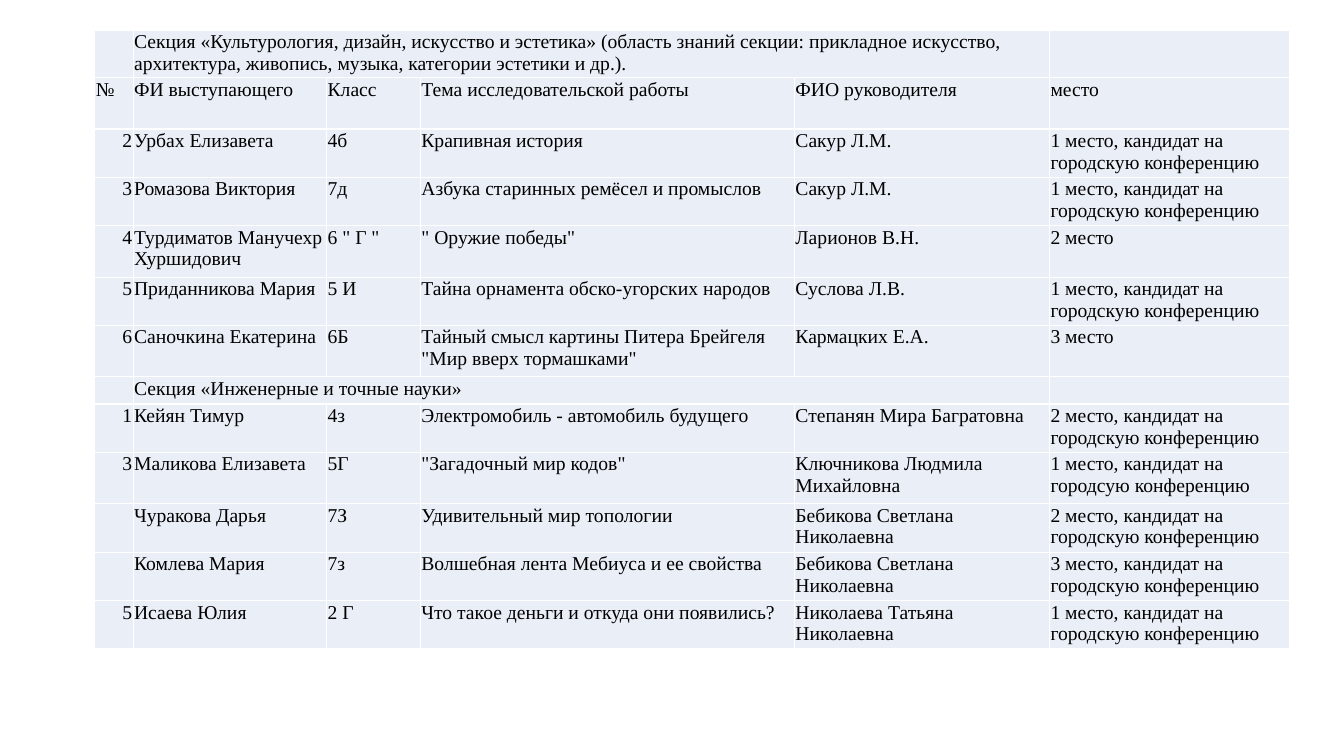
from lxml import etree
from pptx import Presentation
from pptx import util as u
from pptx.dml.color import RGBColor
from pptx.enum import text
from pptx.oxml import ns

BLACK = RGBColor(0x00, 0x00, 0x00)
PALE_BLUE = RGBColor(0xEA, 0xEF, 0xF7)
WHITE = RGBColor(0xFF, 0xFF, 0xFF)

FONT_SIZE = u.Pt(14)
FONT_FORMAT = {"name": "Times New Roman", "size": FONT_SIZE, "bold": False}
CELL_FORMAT = {
    "margin_left": u.Inches(0.01),
    "margin_right": u.Inches(0.01),
    "margin_top": u.Inches(0.01),
    "margin_bottom": u.Inches(0),
    "vertical_anchor": text.MSO_ANCHOR.TOP,
}
TABLE_FORMAT = {"first_row": False, "horz_banding": False}

COLUMN_WIDTHS = [0.38, 1.92, 0.93, 3.71, 2.53, 2.38]
ROW_HEIGHTS = [0.47, 0.51, 0.48, 0.48, 0.51, 0.48, 0.51,
               0.27, 0.48, 0.51, 0.48, 0.48, 0.48]
CANDIDATE = "место, кандидат на городскую конференцию"

# A row with a single entry is a section heading
ROWS = [
    ["Секция «Культурология, дизайн, искусство и эстетика» (область знаний секции: "
     "прикладное искусство, архитектура, живопись, музыка, категории эстетики и др.)."],
    ["№", "ФИ выступающего", "Класс", "Тема исследовательской работы",
     "ФИО руководителя", "место"],
    ["2", "Урбах Елизавета", "4б", "Крапивная история", "Сакур Л.М.", f"1 {CANDIDATE}"],
    ["3", "Ромазова Виктория", "7д", "Азбука старинных ремёсел и промыслов",
     "Сакур Л.М.", f"1 {CANDIDATE}"],
    ["4", "Турдиматов Манучехр Хуршидович", '6 " Г "', '" Оружие победы"',
     "Ларионов В.Н.", "2 место"],
    ["5", "Приданникова Мария", "5 И", "Тайна орнамента обско-угорских народов",
     "Суслова Л.В.", f"1 {CANDIDATE}"],
    ["6", "Саночкина Екатерина", "6Б",
     'Тайный смысл картины Питера Брейгеля "Мир вверх тормашками"',
     "Кармацких Е.А.", "3 место"],
    ["Секция «Инженерные и точные науки»"],
    ["1", "Кейян Тимур", "4з", "Электромобиль - автомобиль будущего",
     "Степанян Мира Багратовна", f"2 {CANDIDATE}"],
    ["3", "Маликова Елизавета", "5Г", '"Загадочный мир кодов"',
     "Ключникова Людмила Михайловна", "1 место, кандидат на городсую конференцию"],
    ["", "Чуракова Дарья", "7З", "Удивительный мир топологии",
     "Бебикова Светлана Николаевна", f"2 {CANDIDATE}"],
    ["", "Комлева Мария", "7з", "Волшебная лента Мебиуса и ее свойства",
     "Бебикова Светлана Николаевна", f"3 {CANDIDATE}"],
    ["5", "Исаева Юлия", "2 Г", "Что такое деньги и откуда они появились?",
     "Николаева Татьяна Николаевна", f"1 {CANDIDATE}"],
]


def apply_format(target, values):
    for name, value in values.items():
        setattr(target, name, value)


def add_borders(cell):
    properties = cell._tc.get_or_add_tcPr()
    for side in ("a:lnL", "a:lnR", "a:lnT", "a:lnB"):
        line = etree.SubElement(properties, ns.qn(side), w=str(u.Pt(1)))
        fill = etree.SubElement(line, ns.qn("a:solidFill"))
        etree.SubElement(fill, ns.qn("a:srgbClr"), val=str(WHITE))


def style_cell(cell):
    apply_format(cell, CELL_FORMAT)
    add_borders(cell)
    cell.fill.solid()
    cell.fill.fore_color.rgb = PALE_BLUE


def write_cell(cell, wording):
    para = cell.text_frame.paragraphs[0]
    if wording.isdigit():
        para.alignment = text.PP_ALIGN.RIGHT
    if wording:
        span = para.add_run()
        span.text = wording
        apply_format(span.font, FONT_FORMAT)
        span.font.color.rgb = BLACK
    else:
        # Keep an empty cell from stretching its row
        etree.SubElement(para._p, ns.qn("a:endParaRPr"),
                         sz=str(int(FONT_SIZE.pt * 100)))


def add_results_table(page):
    frame = page.shapes.add_table(
        len(ROWS), len(COLUMN_WIDTHS), u.Inches(0.94), u.Inches(0.3),
        u.Inches(sum(COLUMN_WIDTHS)), u.Inches(sum(ROW_HEIGHTS)))
    table = frame.table
    apply_format(table, TABLE_FORMAT)
    for column, width in zip(table.columns, COLUMN_WIDTHS):
        column.width = u.Inches(width)
    for row, height in zip(table.rows, ROW_HEIGHTS):
        row.height = u.Inches(height)

    for row_index, entries in enumerate(ROWS):
        is_section = len(entries) == 1
        if is_section:
            entries = ["", entries[0], "", "", "", ""]
        for column_index, wording in enumerate(entries):
            cell = table.cell(row_index, column_index)
            style_cell(cell)
            write_cell(cell, wording)
        if is_section:
            table.cell(row_index, 1).merge(table.cell(row_index, 4))


def main():
    deck = Presentation()
    deck.slide_width = u.Inches(13.33)
    deck.slide_height = u.Inches(7.5)
    # Blank layout: the slide holds only the table
    page = deck.slides.add_slide(deck.slide_layouts[6])
    add_results_table(page)
    deck.save("out.pptx")


if __name__ == "__main__":
    main()
